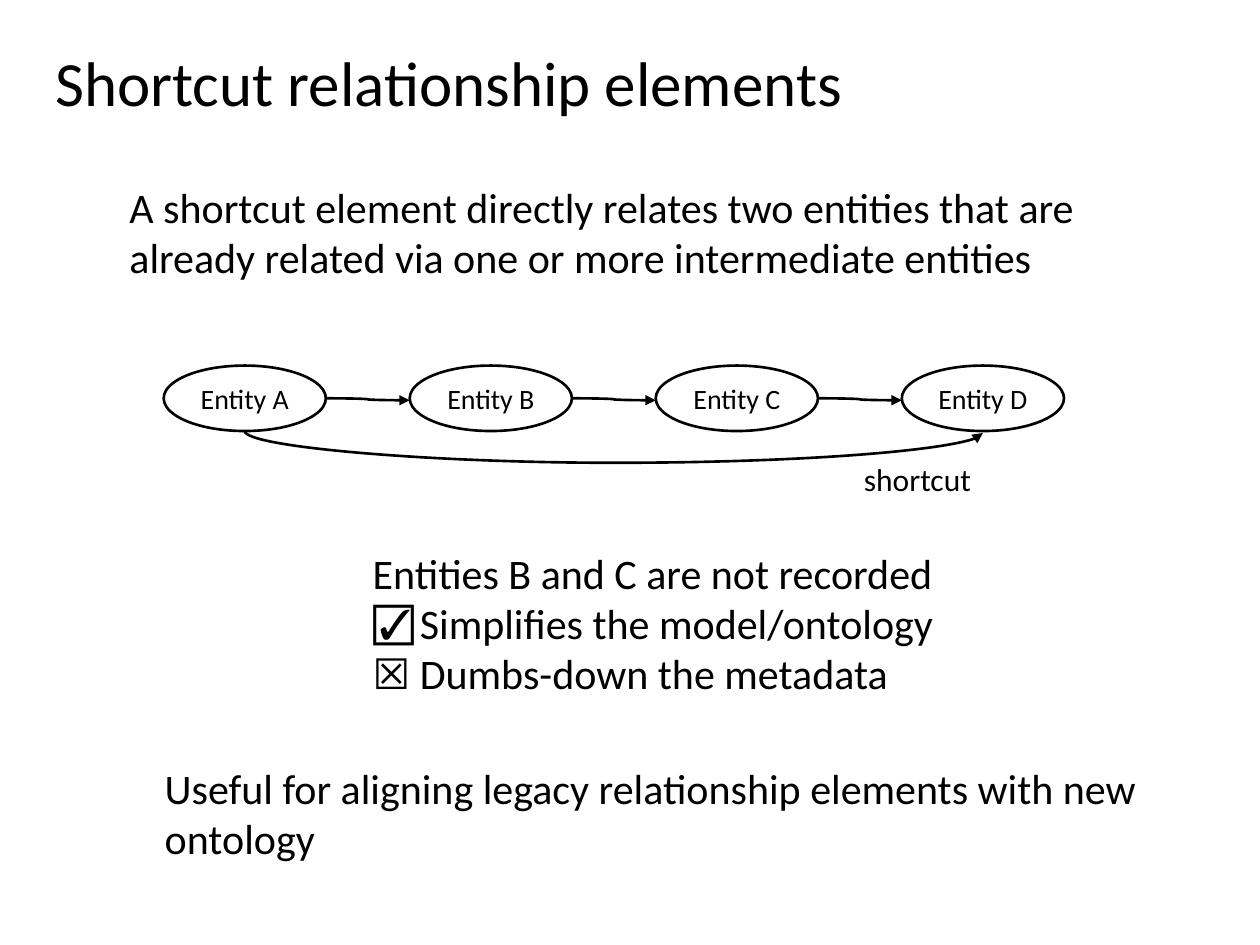
"""Build a slide explaining shortcut relationship elements between entities."""
from dataclasses import dataclass

from pptx import Presentation
from pptx.dml.color import RGBColor
from pptx.enum.shapes import MSO_CONNECTOR, MSO_SHAPE
from pptx.enum.text import MSO_ANCHOR, MSO_AUTO_SIZE, PP_ALIGN
from pptx.oxml.ns import qn
from pptx.util import Cm, Pt
from lxml import etree

CURVE = MSO_CONNECTOR.CURVE
ELLIPSE = MSO_SHAPE.OVAL
MIDDLE, TOP = MSO_ANCHOR.MIDDLE, MSO_ANCHOR.TOP
GROW = MSO_AUTO_SIZE.SHAPE_TO_FIT_TEXT
LEFT, CENTER = PP_ALIGN.LEFT, PP_ALIGN.CENTER


@dataclass(frozen=True)
class Theme:
    font: str = "Calibri"
    ink: RGBColor = RGBColor(0, 0, 0)
    title: Pt = Pt(36)
    body: Pt = Pt(24)
    label: Pt = Pt(18)
    entity: Pt = Pt(16)
    line: Pt = Pt(1.5)


theme = Theme()


def write(box, text, size, align=LEFT, wrap=False, anchor=TOP):
    frame = box.text_frame
    frame.text = text
    frame.word_wrap = wrap
    frame.auto_size = GROW
    frame.vertical_anchor = anchor
    for para in frame.paragraphs:
        para.alignment = align
        para.space_before = Pt(0)
        for span in para.runs:
            span.font.name = theme.font
            span.font.size = size
            span.font.color.rgb = theme.ink


def draw_arrow(page, start_x, start_y, end_x, end_y):
    arrow = page.shapes.add_connector(
        CURVE, Cm(start_x), Cm(start_y), Cm(end_x), Cm(end_y))
    arrow.line.color.rgb = theme.ink
    arrow.line.width = theme.line
    properties = arrow._element.spPr
    line = properties.find(qn("a:ln"))
    etree.SubElement(line, qn("a:tailEnd"), type="triangle")
    etree.SubElement(properties, qn("a:effectLst"))
    return arrow


deck = Presentation()
deck.slide_width, deck.slide_height = Cm(25.4), Cm(19.05)
page = deck.slides.add_slide(deck.slide_layouts[1])

title = page.shapes.title
title.left, title.top, title.width, title.height = Cm(0.86), Cm(0.74), Cm(16.51), Cm(1.8)
write(title, "Shortcut relationship elements", theme.title)

effects = page.placeholders[1]
effects.left, effects.top, effects.width, effects.height = Cm(7.26), Cm(10.9), Cm(11.91), Cm(3.33)
write(effects, "Entities B and C are not recorded\n"
      "Simplifies the model/ontology\n"
      "☒ Dumbs-down the metadata", theme.body)
for para, bullet in zip(effects.text_frame.paragraphs, ("", "☑", "")):
    settings = para._p.get_or_add_pPr()
    indent = Cm(0.95) if bullet else 0
    settings.set("marL", str(indent))
    settings.set("indent", str(-indent))
    if bullet:
        etree.SubElement(settings, qn("a:buChar"), char=bullet)
    else:
        etree.SubElement(settings, qn("a:buNone"))

statements = (
    (2.36, 3.53, "A shortcut element directly relates two entities that are "
     "already related via one or more intermediate entities"),
    (3.07, 15.24, "Useful for aligning legacy relationship elements with new ontology"),
)
for left, top, text in statements:
    box = page.shapes.add_textbox(Cm(left), Cm(top), Cm(20.29), Cm(2.31))
    write(box, text, theme.body, wrap=True)

entities = ("Entity A", "Entity B", "Entity C", "Entity D")
first_left, entity_top, pitch = 3.3, 7.37, 4.96
entity_width, entity_height = 3.27, 1.32
for index, name in enumerate(entities):
    left = first_left + index * pitch
    entity = page.shapes.add_shape(
        ELLIPSE, Cm(left), Cm(entity_top), Cm(entity_width), Cm(entity_height))
    entity.shadow.inherit = False
    entity.fill.background()
    entity.line.color.rgb = theme.ink
    entity.line.width = theme.line
    write(entity, name, theme.entity, CENTER, anchor=MIDDLE)
    if index:
        draw_arrow(page, left - pitch + entity_width, 8.03, left, 8.07)

span_width = pitch * (len(entities) - 1)
drop, depth = 0.04, 0.64
middle_x = first_left + (entity_width + span_width) / 2
middle_y = entity_top + entity_height + drop / 2
shortcut = draw_arrow(page, middle_x - drop / 2, middle_y - span_width / 2,
                      middle_x + drop / 2, middle_y + span_width / 2)
shortcut.rotation = 270
transform = shortcut._element.spPr.find(qn("a:xfrm"))
transform.set("rot", str(270 * 60000))
transform.set("flipH", "1")
adjustments = shortcut._element.spPr.find(qn("a:prstGeom")).get_or_add_avLst()
etree.SubElement(adjustments, qn("a:gd"), name="adj1",
                 fmla=f"val {round(depth / drop * 100000)}")

label = page.shapes.add_textbox(Cm(17.15), Cm(9.14), Cm(2.69), Cm(1.02))
write(label, "shortcut", theme.label, CENTER)

deck.save("out.pptx")
